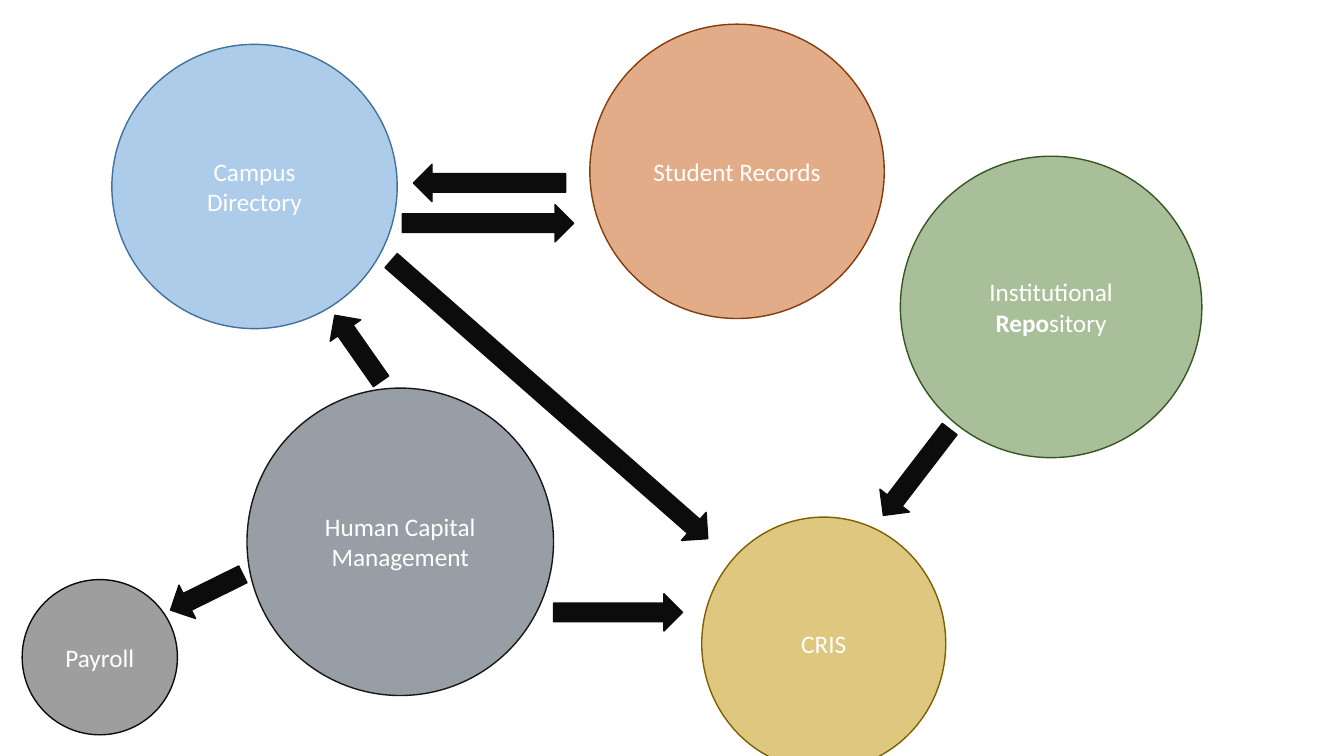
"""Build a slide of university systems and the data flows between them."""
from dataclasses import dataclass

import pptx
import pptx.dml.color
import pptx.enum.shapes
import pptx.enum.text
import pptx.oxml
import pptx.oxml.ns
import pptx.shapes.autoshape
import pptx.slide
import pptx.util

Inches = pptx.util.Inches
RGBColor = pptx.dml.color.RGBColor
MSO_SHAPE = pptx.enum.shapes.MSO_SHAPE

WHITE = RGBColor(0xFF, 0xFF, 0xFF)
BLACK = RGBColor(0x0C, 0x0C, 0x0C)
BLUE = RGBColor(0x5B, 0x9B, 0xD5)
BLUE_EDGE = RGBColor(0x42, 0x71, 0x9B)
SLATE = RGBColor(0x32, 0x3F, 0x4F)
SLATE_EDGE = RGBColor(0x17, 0x16, 0x16)
ORANGE = RGBColor(0xC5, 0x5A, 0x11)
ORANGE_EDGE = RGBColor(0x83, 0x3C, 0x0B)
GREEN = RGBColor(0x54, 0x81, 0x35)
GREEN_EDGE = RGBColor(0x38, 0x56, 0x23)
GOLD = RGBColor(0xBF, 0x90, 0x00)
GOLD_EDGE = RGBColor(0x7F, 0x60, 0x00)
GRAY = RGBColor(0x3F, 0x3F, 0x3F)

CIRCLE_OPACITY = 50
ARROW_THICKNESS = 0.37
FONT_FORMAT = {"name": "Calibri", "size": pptx.util.Pt(18)}
FRAME_FORMAT = {
    "word_wrap": True,
    "vertical_anchor": pptx.enum.text.MSO_ANCHOR.MIDDLE,
    "margin_left": Inches(0.1),
    "margin_right": Inches(0.1),
    "margin_top": Inches(0.05),
    "margin_bottom": Inches(0.05),
}


@dataclass(frozen=True)
class Run:
    text: str
    bold: bool = False


@dataclass(frozen=True)
class System:
    runs: tuple[Run, ...]
    left: float
    top: float
    width: float
    height: float
    fill: RGBColor
    edge: RGBColor


@dataclass(frozen=True)
class Flow:
    left: float
    top: float
    length: float
    rotation: float = 0


SYSTEMS = (
    System((Run("Campus Directory"),), 1.11, 0.44, 2.83, 2.82, BLUE, BLUE_EDGE),
    System((Run("Human Capital Management"),), 2.45, 3.85, 3.04, 3.05, SLATE, SLATE_EDGE),
    System((Run("Student Records"),), 5.85, 0.24, 2.92, 2.92, ORANGE, ORANGE_EDGE),
    System(
        (Run("Institutional "), Run("Repo", bold=True), Run("sitory")),
        8.93, 1.55, 2.99, 2.99, GREEN, GREEN_EDGE,
    ),
    System((Run("CRIS"),), 6.96, 5.13, 2.42, 2.51, GOLD, GOLD_EDGE),
    System((Run("Payroll"),), 0.22, 5.75, 1.54, 1.54, GRAY, BLACK),
)

FLOWS = (
    Flow(4.1, 1.63, 1.51, 180),
    Flow(3.15, 3.27, 0.8, 235),
    Flow(1.65, 5.69, 0.8, 153.7),
    Flow(5.49, 5.89, 1.28),
    Flow(3.36, 3.78, 4.18, 41.3),
    Flow(3.99, 2.03, 1.7),
    Flow(8.55, 4.5, 1.08, 127.5),
)


def apply_format(target: object, values: dict[str, object]) -> None:
    """Set each named attribute on the target."""
    for name, value in values.items():
        setattr(target, name, value)


def add_filled_shape(
    slide: pptx.slide.Slide,
    kind: MSO_SHAPE,
    box: tuple[float, float, float, float],
    fill: RGBColor,
    edge: RGBColor,
) -> pptx.shapes.autoshape.Shape:
    """Add a flat shape with a solid fill and a thin outline."""
    shape = slide.shapes.add_shape(kind, *(Inches(length) for length in box))
    shape.shadow.inherit = False
    shape.fill.solid()
    shape.fill.fore_color.rgb = fill
    shape.line.color.rgb = edge
    shape.line.width = pptx.util.Pt(1)
    return shape


def set_opacity(shape: pptx.shapes.autoshape.Shape, percent: int) -> None:
    """Make the solid fill of a shape partly transparent."""
    solid_fill = shape.element.spPr.find(pptx.oxml.ns.qn("a:solidFill"))
    alpha = pptx.oxml.parse_xml(
        f'<a:alpha {pptx.oxml.ns.nsdecls("a")} val="{percent * 1000}"/>'
    )
    solid_fill[0].append(alpha)


def draw_system(slide: pptx.slide.Slide, system: System) -> None:
    """Draw one system as a labelled translucent circle."""
    box = (system.left, system.top, system.width, system.height)
    shape = add_filled_shape(slide, MSO_SHAPE.OVAL, box, system.fill, system.edge)
    set_opacity(shape, CIRCLE_OPACITY)
    apply_format(shape.text_frame, FRAME_FORMAT)
    paragraph = shape.text_frame.paragraphs[0]
    paragraph.alignment = pptx.enum.text.PP_ALIGN.CENTER
    for part in system.runs:
        run = paragraph.add_run()
        run.text = part.text
        apply_format(run.font, FONT_FORMAT | {"bold": part.bold})
        run.font.color.rgb = WHITE


def draw_flow(slide: pptx.slide.Slide, flow: Flow) -> None:
    """Draw one data flow as a block arrow."""
    box = (flow.left, flow.top, flow.length, ARROW_THICKNESS)
    shape = add_filled_shape(slide, MSO_SHAPE.RIGHT_ARROW, box, BLACK, BLACK)
    shape.rotation = flow.rotation


def main() -> None:
    """Create the slide and save it."""
    presentation = pptx.Presentation()
    presentation.slide_width = Inches(13.33)
    presentation.slide_height = Inches(7.5)
    slide = presentation.slides.add_slide(presentation.slide_layouts[6])
    for system in SYSTEMS:
        draw_system(slide, system)
    for flow in FLOWS:
        draw_flow(slide, flow)
    presentation.save("out.pptx")


if __name__ == "__main__":
    main()
